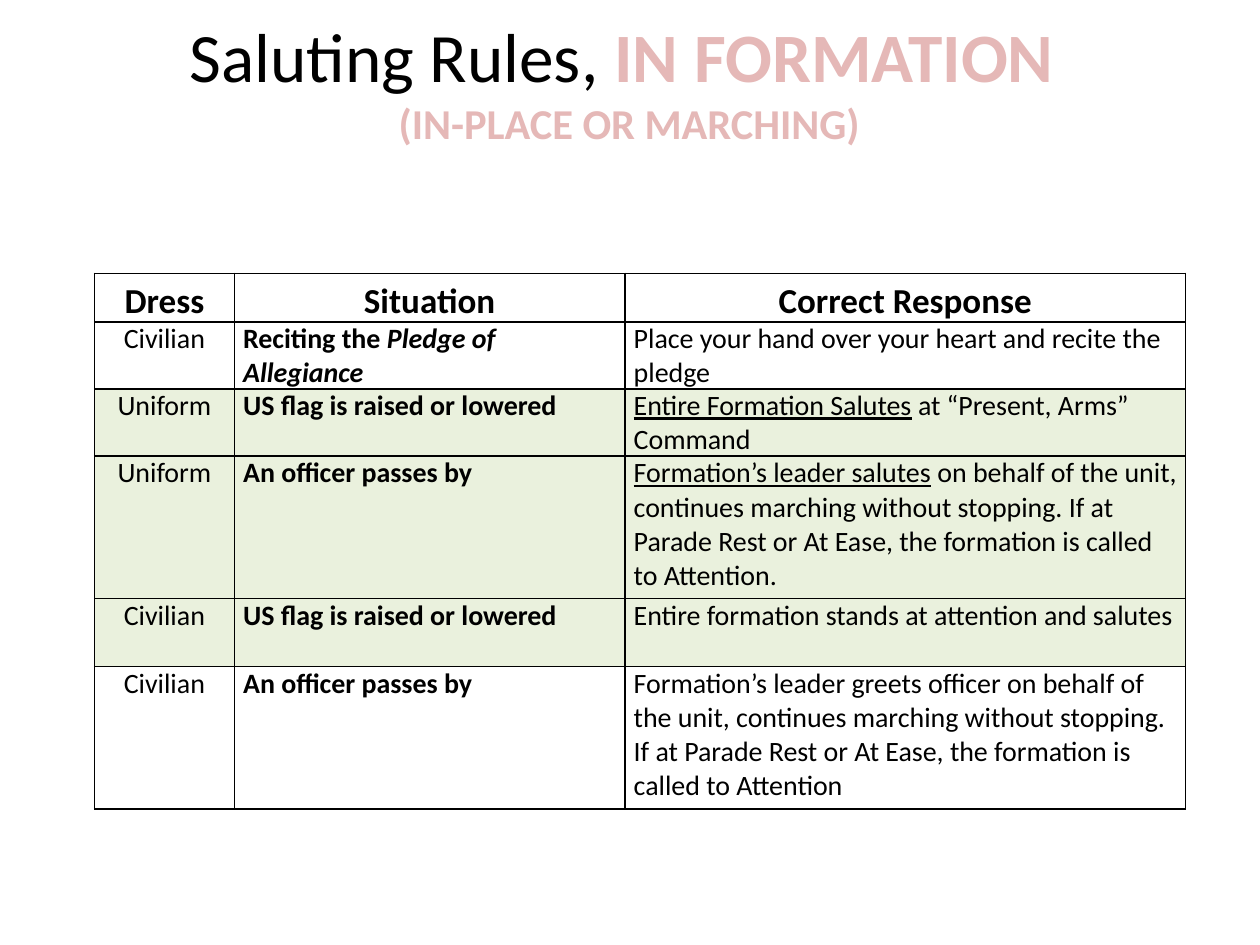
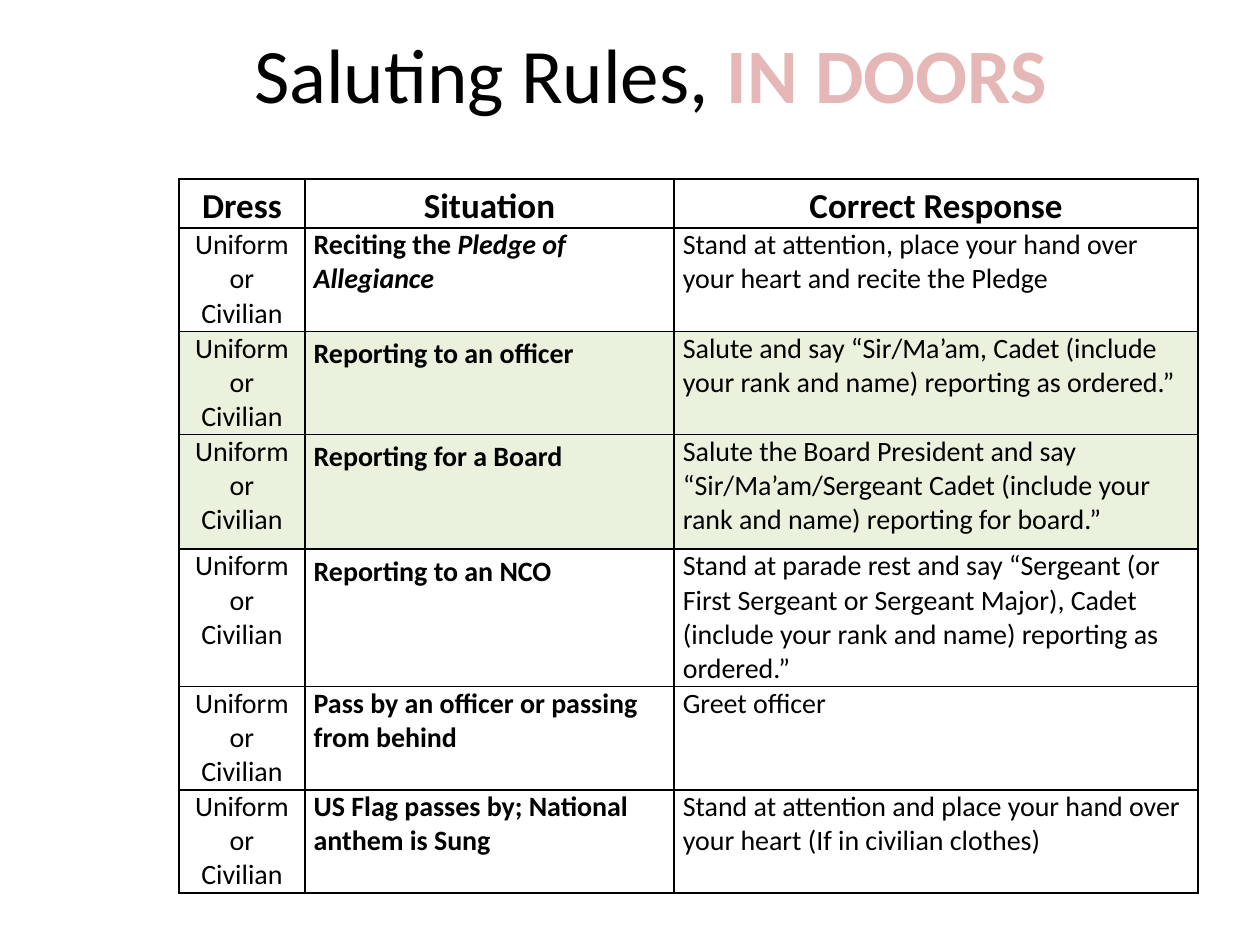
from dataclasses import dataclass

from lxml.etree import SubElement as SubEl
from pptx import Presentation
from pptx.dml.color import RGBColor
from pptx.enum.text import MSO_ANCHOR as Anchor, PP_ALIGN as Align
from pptx.oxml.ns import qn
from pptx.util import Inches, Pt

FONT = "Calibri"
BLACK = RGBColor(0x00, 0x00, 0x00)
PINK = RGBColor(0xE5, 0xB8, 0xB7)
GREEN = RGBColor(0xEA, 0xF1, 0xDD)
HEADS = ("Dress", "Situation", "Correct Response")
LOOSE = 1.15


@dataclass
class Part:
    """A run of text with its style."""
    text: str
    size: float = 16
    bold: bool = False
    italic: bool = False
    under: bool = False
    color: RGBColor = BLACK


@dataclass
class Rule:
    """One row of a table of rules."""
    dress: str
    case: list[Part]
    reply: list[Part]
    high: float
    green: bool = False
    space: float = 1.0


@dataclass
class Page:
    """A title and a table of rules."""
    title: list[list[Part]]
    box: tuple[float, float, float, float]
    foot: float
    left: float
    top: float
    head: float
    cols: tuple[float, float, float]
    rules: list[Rule]


def bold(text: str, italic: bool = False) -> Part:
    """Make a bold part for the situation column."""
    return Part(text, bold=True, italic=italic)


def write(para, parts: list[Part]) -> None:
    """Add styled runs to a paragraph."""
    for part in parts:
        run = para.add_run()
        run.text = part.text
        font = run.font
        font.name, font.size = FONT, Pt(part.size)
        font.bold, font.italic = part.bold, part.italic
        font.underline = part.under
        font.color.rgb = part.color


def edge(cell) -> None:
    """Put a thin black border round a cell."""
    props = cell._tc.get_or_add_tcPr()
    for side in ("a:lnL", "a:lnR", "a:lnT", "a:lnB"):
        line = SubEl(props, qn(side), w=str(Pt(1)))
        fill = SubEl(line, qn("a:solidFill"))
        SubEl(fill, qn("a:srgbClr"), val=str(BLACK))


def fill_cell(cell, parts: list[Part], align: Align, pad: float,
              space: float = 1.0, green: bool = False) -> None:
    """Set the text, padding, border and fill of a cell."""
    cell.margin_left = cell.margin_right = Inches(pad)
    cell.margin_top = cell.margin_bottom = Inches(0)
    edge(cell)
    if green:
        cell.fill.solid()
        cell.fill.fore_color.rgb = GREEN
    else:
        cell.fill.background()
    para = cell.text_frame.paragraphs[0]
    para.alignment, para.line_spacing = align, space
    write(para, parts)


def draw_title(slide, page: Page) -> None:
    """Draw the title lines of a page."""
    box = slide.shapes.add_textbox(*map(Inches, page.box))
    frame = box.text_frame
    frame.word_wrap = True
    frame.vertical_anchor = Anchor.MIDDLE
    frame.margin_bottom = Inches(page.foot)
    para = frame.paragraphs[0]
    para.alignment = Align.CENTER
    for i, line in enumerate(page.title):
        if i:
            para.add_line_break()
        write(para, line)


def draw_table(slide, page: Page) -> None:
    """Draw the table of rules of a page."""
    highs = [page.head] + [rule.high for rule in page.rules]
    table = slide.shapes.add_table(
        len(highs), len(HEADS), Inches(page.left), Inches(page.top),
        Inches(sum(page.cols)), Inches(sum(highs))).table
    table.first_row = table.horz_banding = False
    for col, wide in zip(table.columns, page.cols):
        col.width = Inches(wide)
    for row, high in zip(table.rows, highs):
        row.height = Inches(high)
    for i, head in enumerate(HEADS):
        fill_cell(table.cell(0, i), [Part(head, 20, True)],
                  Align.CENTER, 0.06, LOOSE)
    for i, rule in enumerate(page.rules, 1):
        dress, case, reply = table.rows[i].cells
        fill_cell(dress, [Part(rule.dress)], Align.CENTER, 0.07,
                  green=rule.green)
        fill_cell(case, rule.case, Align.LEFT, 0.07, rule.space, rule.green)
        fill_cell(reply, rule.reply, Align.LEFT, 0.07, green=rule.green)


CIV, UNI, BOTH = "Civilian", "Uniform", "Uniform or Civilian"
PLEDGE = [bold("Reciting the "), bold("Pledge of Allegiance", True)]
FLAG = [bold("US flag is raised or lowered")]
PASS = [bold("An officer passes by")]

PAGES = [
    Page(
        [[Part("Saluting Rules, ", 39.6),
          Part("IN FORMATION ", 39.6, True, color=PINK)],
         [Part("(IN-PLACE OR MARCHING)", 24.3, True, color=PINK)]],
        (1.08, 0.3, 7.83, 1.25), 0.62, 0.75, 2.17, 0.38, (1.11, 3.1, 4.45),
        [
            Rule(CIV, PLEDGE, [Part(
                "Place your hand over your heart and recite the pledge")],
                0.53),
            Rule(UNI, FLAG, [
                Part("Entire Formation Salutes", under=True),
                Part(" at “Present, Arms” Command")], 0.53, True),
            Rule(UNI, PASS, [
                Part("Formation’s leader salutes", under=True),
                Part(" on behalf of the unit, continues marching without "
                     "stopping. If at Parade Rest or At Ease, the formation "
                     "is called to Attention.")], 1.13, True),
            Rule(CIV, FLAG, [Part(
                "Entire formation stands at attention and salutes")],
                0.54, True),
            Rule(CIV, PASS, [Part(
                "Formation’s leader greets officer on behalf of the unit, "
                "continues marching without stopping. If at Parade Rest or "
                "At Ease, the formation is called to Attention")], 1.13),
        ]),
    Page(
        [[Part("Saluting Rules,", 44),
          Part(" IN DOORS", 44, True, color=PINK)]],
        (1.25, 0.08, 7.83, 1), 0.05, 1.42, 1.42, 0.39, (1, 2.93, 4.16),
        [
            Rule(BOTH, PLEDGE, [Part(
                "Stand at attention, place your hand over your heart and "
                "recite the Pledge")], 0.82),
            Rule(BOTH, [bold("Reporting to an officer")], [Part(
                "Salute and say “Sir/Ma’am, Cadet (include your rank and "
                "name) reporting as ordered.”")], 0.82, True, LOOSE),
            Rule(BOTH, [bold("Reporting for a Board")], [Part(
                "Salute the Board President and say “Sir/Ma’am/Sergeant "
                "Cadet (include your rank and name) reporting for board.”")],
                0.91, True, LOOSE),
            Rule(BOTH, [bold("Reporting to an NCO")], [Part(
                "Stand at parade rest and say “Sergeant (or First Sergeant "
                "or Sergeant Major), Cadet (include your rank and name) "
                "reporting as ordered.”")], 1.09, space=LOOSE),
            Rule(BOTH, [bold("Pass by an officer or passing from behind")],
                 [Part("Greet officer")], 0.82),
            Rule(BOTH, [bold("US Flag passes by; National anthem is Sung")],
                 [Part("Stand at attention and place your hand over your "
                       "heart (If in civilian clothes)")], 0.82),
        ]),
]


def main() -> None:
    """Build and save the slides."""
    deck = Presentation()
    deck.slide_width, deck.slide_height = Inches(10), Inches(7.5)
    for page in PAGES:
        slide = deck.slides.add_slide(deck.slide_layouts[6])
        draw_title(slide, page)
        draw_table(slide, page)
    deck.save("out.pptx")


if __name__ == "__main__":
    main()
